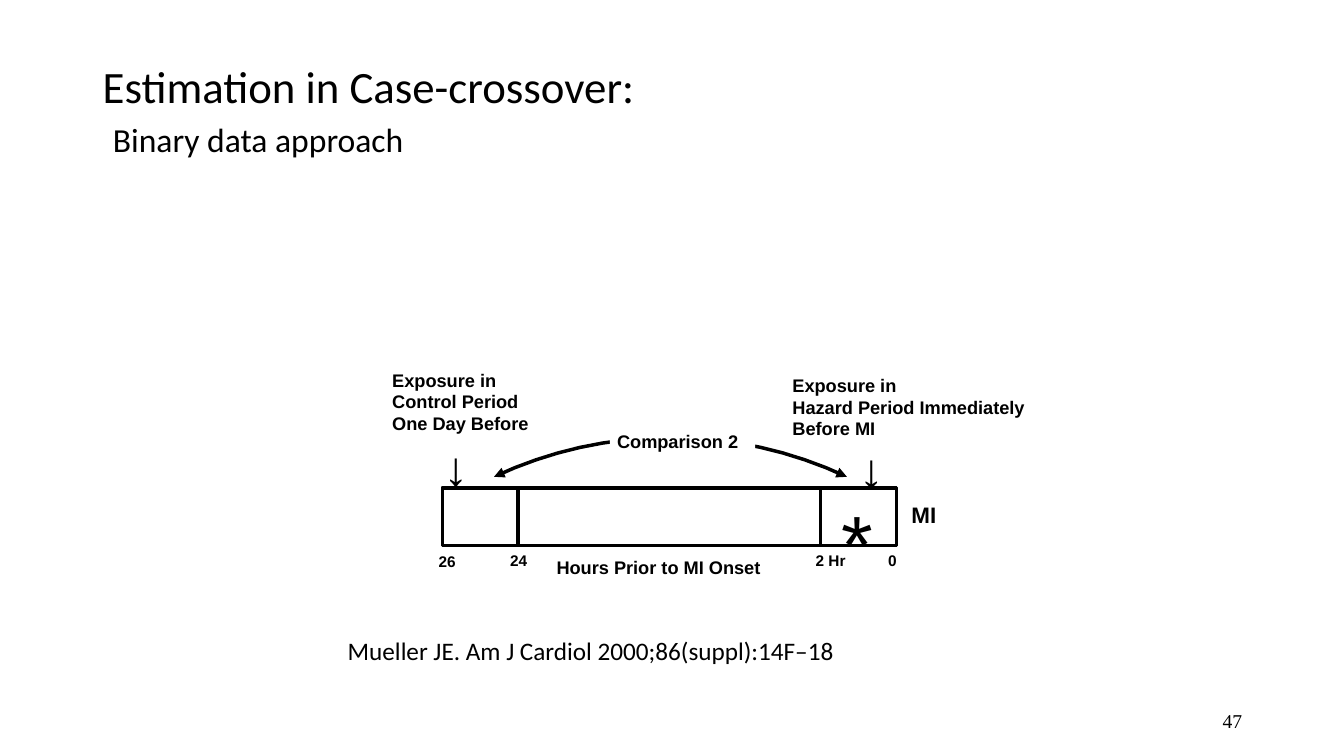
import math

import pptx
import pptx.dml.color
import pptx.enum.shapes
import pptx.enum.text
import pptx.oxml
import pptx.oxml.ns
import pptx.util

Inches = pptx.util.Inches
Pt = pptx.util.Pt
ALIGN = pptx.enum.text.PP_ALIGN
ANCHOR = pptx.enum.text.MSO_ANCHOR
RECTANGLE = pptx.enum.shapes.MSO_SHAPE.RECTANGLE
BLACK = pptx.dml.color.RGBColor(0, 0, 0)
WHITE = pptx.dml.color.RGBColor(255, 255, 255)


def add_run(paragraph, text, size, font="Arial", bold=False):
    run = paragraph.add_run()
    run.text = text
    run.font.size = Pt(size)
    run.font.name = font
    run.font.bold = bold
    run.font.color.rgb = BLACK


def add_text_box(slide, left, top, width, height, margin=0):
    box = slide.shapes.add_textbox(Inches(left), Inches(top), Inches(width), Inches(height))
    frame = box.text_frame
    frame.word_wrap = True
    if margin is not None:
        frame.margin_left = frame.margin_right = Inches(margin)
        frame.margin_top = frame.margin_bottom = Inches(margin)
    return frame


def add_label(slide, left, top, width, height, lines, size=13, bold=True):
    """Diagram label without margins, one paragraph per line."""
    frame = add_text_box(slide, left, top, width, height)
    for index, line in enumerate(lines):
        paragraph = frame.add_paragraph() if index else frame.paragraphs[0]
        add_run(paragraph, line, size, bold=bold)


def add_box(slide, left, top, width, height, fill=None):
    """Black outline, or a borderless patch when a fill is given."""
    box = slide.shapes.add_shape(
        RECTANGLE, Inches(left), Inches(top), Inches(width), Inches(height))
    box.shadow.inherit = False
    if fill is None:
        box.fill.background()
        box.line.color.rgb = BLACK
        box.line.width = Pt(2.5)
    else:
        box.fill.solid()
        box.fill.fore_color.rgb = fill
        box.line.fill.background()


def add_comparison_arc(slide, left, top, width, height):
    """Circular arc with an arrowhead at both ends."""
    radius = ((width / 2) ** 2 + height ** 2) / (2 * height)
    half_angle = math.asin(width / 2 / radius)
    steps = 16
    points = []
    for step in range(steps + 1):
        angle = half_angle * (1 - 2 * step / steps)
        points.append((Inches(left + width / 2 + radius * math.sin(angle)),
                       Inches(top + radius * (1 - math.cos(angle)))))
    builder = slide.shapes.build_freeform(*points[0])
    builder.add_line_segments(points[1:], close=False)
    arc = builder.convert_to_shape()
    arc.shadow.inherit = False
    arc.fill.background()
    arc.line.color.rgb = BLACK
    arc.line.width = Pt(2.5)
    outline = arc.line._get_or_add_ln()
    for end in ("a:headEnd", "a:tailEnd"):
        pptx.oxml.ns.qn(end)
        arrowhead = pptx.oxml.parse_xml(
            f'<{end} {pptx.oxml.ns.nsdecls("a")} type="triangle"/>')
        outline.append(arrowhead)


def add_timeline(slide, left, top, width, height):
    """Hours before onset, with the control and hazard periods at the ends."""
    period = width / 6
    hazard = left + width - period
    bottom = top + height
    add_box(slide, left, top, width, height)
    for start in (left, hazard):
        add_box(slide, start, top, period, height)
    add_label(slide, hazard + 0.21, top + 0.04, 0.37, 0.89, ["*"], 58, bold=False)
    add_label(slide, left + 1.13, bottom + 0.11, 2.6, 0.26, ["Hours Prior to MI Onset"])

    ticks = [("26", left - 0.04, 0.07), ("24", left + 0.67, 0.06),
             ("2 Hr", hazard - 0.05, 0.06), ("0", left + width - 0.08, 0.06)]
    for text, tick_left, gap in ticks:
        add_label(slide, tick_left, bottom + gap, 0.47, 0.2, [text], 11)
    add_label(slide, left + width + 0.15, top + 0.13, 0.4, 0.25, ["MI"], 16)


def add_comparison(slide, left, top, width, height):
    """Exposure labels, their arrows and the arc that joins both periods."""
    add_label(slide, left + 3.97, top + 0.05, 2.33, 0.72,
              ["Exposure in", "Hazard Period Immediately Before MI"])
    add_label(slide, left, top, 1.71, 0.69,
              ["Exposure in Control Period", "One Day Before"])
    add_comparison_arc(slide, left + 1.01, top + 0.68, 3.5, height - 0.79)
    for arrow_left, arrow_top in ((0.51, 0.68), (4.63, 0.7)):
        add_label(slide, left + arrow_left, top + arrow_top, 0.34, 0.55, ["↓"], 35)
    add_box(slide, left + 2.16, top + 0.61, 1.44, 0.2, WHITE)
    add_label(slide, left + 2.23, top + 0.61, 1.65, 0.44, ["Comparison 2"])


def add_title(slide, left, top, width, height):
    frame = add_text_box(slide, left, top, width, height, None)
    frame.vertical_anchor = ANCHOR.MIDDLE
    paragraph = frame.paragraphs[0]
    paragraph.line_spacing = 0.9
    add_run(paragraph, "Estimation in Case-crossover:", 32, "Calibri")
    paragraph.add_line_break()
    add_run(paragraph, " ", 32, "Calibri")
    add_run(paragraph, "Binary data approach", 24, "Calibri")


def add_citation(slide, left, top, width, height):
    frame = add_text_box(slide, left, top, width, height, None)
    frame.word_wrap = False
    frame.paragraphs[0].alignment = ALIGN.CENTER
    add_run(frame.paragraphs[0], "Mueller JE. Am J Cardiol 2000;86(suppl):14F–18", 18, "Calibri")


def add_page_number(slide, left, top, width, height):
    frame = add_text_box(slide, left, top, width, height, None)
    frame.vertical_anchor = ANCHOR.MIDDLE
    frame.paragraphs[0].alignment = ALIGN.RIGHT
    add_run(frame.paragraphs[0], "47", 14, "Times New Roman")


def main():
    presentation = pptx.Presentation()
    presentation.slide_width = Inches(13.33)
    presentation.slide_height = Inches(7.5)
    slide = presentation.slides.add_slide(presentation.slide_layouts[6])
    add_page_number(slide, 9.42, 6.95, 3, 0.4)
    add_timeline(slide, 4.39, 4.84, 4.5, 0.57)
    add_comparison(slide, 3.89, 3.66, 6.3, 1.18)
    add_title(slide, 0.92, 0.4, 11.5, 1.45)
    add_citation(slide, 3.32, 6.25, 5.08, 0.4)
    presentation.save("out.pptx")


if __name__ == "__main__":
    main()
